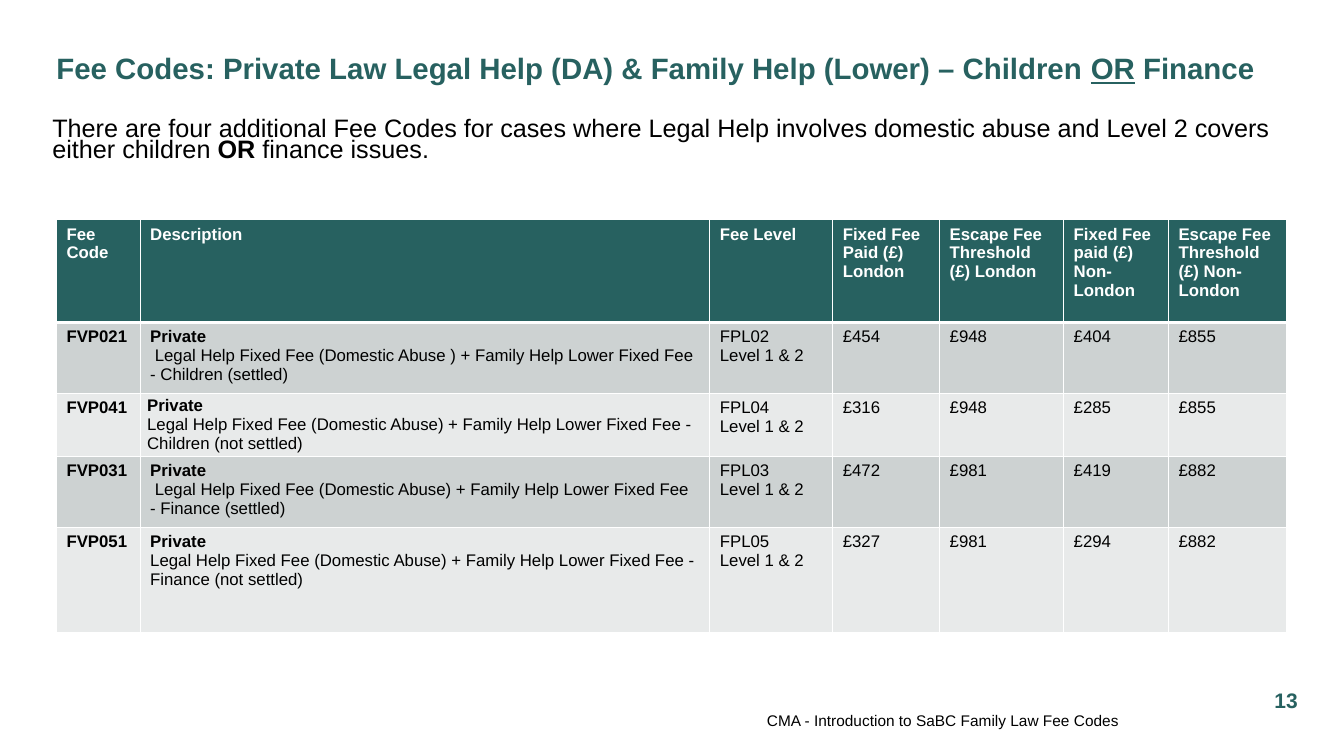
from lxml.etree import SubElement
from pptx import Presentation
from pptx.dml.color import RGBColor
from pptx.enum.text import MSO_ANCHOR, PP_ALIGN
from pptx.oxml.ns import qn
from pptx.util import Inches, Pt

TITLE = [("Fee Codes: Private Law Legal Help (DA) & Family Help (Lower) – Children ", {}),
         ("OR", {"underline": True}), (" Finance", {})]
INTRO = [("There are four additional Fee Codes for cases where Legal Help involves "
          "domestic abuse and Level 2 covers either children ", {}),
         ("OR", {"bold": True}), (" finance issues.", {})]
FOOTER = "CMA - Introduction to SaBC Family Law Fee Codes"
PAGE = "13"

HEADERS = ["Fee Code", "Description", "Fee Level", "Fixed Fee Paid (£) London",
           "Escape Fee Threshold (£) London", "Fixed Fee paid (£) Non-London",
           "Escape Fee Threshold (£) Non-London"]
FEES = [
    ("FVP021", " Legal Help Fixed Fee (Domestic Abuse ) + Family Help Lower Fixed Fee - Children (settled)",
     "FPL02", "£454", "£948", "£404", "£855"),
    ("FVP041", "Legal Help Fixed Fee (Domestic Abuse) + Family Help Lower Fixed Fee - Children (not settled)",
     "FPL04", "£316", "£948", "£285", "£855"),
    ("FVP031", " Legal Help Fixed Fee (Domestic Abuse) + Family Help Lower Fixed Fee - Finance (settled)",
     "FPL03", "£472", "£981", "£419", "£882"),
    ("FVP051", "Legal Help Fixed Fee (Domestic Abuse) + Family Help Lower Fixed Fee - Finance (not settled)",
     "FPL05", "£327", "£981", "£294", "£882"),
]
LEVEL = "Level 1 & 2"
COL_WIDTHS = [0.83, 5.65, 1.22, 1.06, 1.23, 1.04, 1.17]
ROW_HEIGHTS = [1.02, 0.67, 0.63, 0.66, 1.05]
TIGHT_CELL = (2, 1)

THEME = {"font": "Arial", "green": "276160", "black": "000000", "white": "FFFFFF",
         "bands": ("CDD2D2", "E8EAEA"), "title": 21, "intro": 18, "page": 15,
         "table": 12, "footer": 11}


def add_runs(p, runs, size, color, bold=False):
    for text, extra in runs:
        r = p.add_run()
        r.text = text
        fmt = {"name": THEME["font"], "size": Pt(size), "bold": bold} | extra
        for key, value in fmt.items():
            setattr(r.font, key, value)
        r.font.color.rgb = RGBColor.from_string(THEME[color])


def set_frame(tf, inset=0, anchor=MSO_ANCHOR.MIDDLE):
    fmt = {"word_wrap": True, "vertical_anchor": anchor,
           "margin_left": Inches(inset), "margin_right": Inches(inset),
           "margin_top": Inches(inset / 2), "margin_bottom": Inches(inset / 2)}
    for key, value in fmt.items():
        setattr(tf, key, value)


def add_text(s, box, runs, size, color, bold=False, align=PP_ALIGN.LEFT, **frame):
    tf = s.shapes.add_textbox(*map(Inches, box)).text_frame
    set_frame(tf, **frame)
    p = tf.paragraphs[0]
    p.alignment = align
    add_runs(p, runs, size, color, bold)
    return p


def set_borders(cell, top, bottom):
    tc_pr = cell._tc.get_or_add_tcPr()
    for side, width in (("L", 1), ("R", 1), ("T", top), ("B", bottom)):
        ln = SubElement(tc_pr, qn(f"a:ln{side}"), w=str(Pt(width)))
        fill = SubElement(ln, qn("a:solidFill"))
        SubElement(fill, qn("a:srgbClr"), val=THEME["white"])


def fee_row(code, description, level, *amounts):
    return [[(code, True)], [("Private", True), (description, False)],
            [(level, False), (LEVEL, False)], *[[(a, False)] for a in amounts]]


def add_fee_table(s):
    rows = [[[(h, True)] for h in HEADERS]] + [fee_row(*f) for f in FEES]
    table = s.shapes.add_table(len(rows), len(HEADERS), Inches(0.56), Inches(2.18),
                               Inches(sum(COL_WIDTHS)), Inches(sum(ROW_HEIGHTS))).table
    for col, width in zip(table.columns, COL_WIDTHS):
        col.width = Inches(width)
    for i, (row, height) in enumerate(zip(rows, ROW_HEIGHTS)):
        table.rows[i].height = Inches(height)
        fill = THEME["bands"][(i - 1) % 2] if i else THEME["green"]
        for j, lines in enumerate(row):
            cell = table.cell(i, j)
            set_borders(cell, 3 if i == 1 else 1, 1 if i else 3)
            cell.fill.solid()
            cell.fill.fore_color.rgb = RGBColor.from_string(fill)
            if (i, j) == TIGHT_CELL:
                cell.vertical_anchor = MSO_ANCHOR.MIDDLE
                cell.margin_left = cell.margin_right = Inches(0.07)
                cell.margin_top = cell.margin_bottom = 0
            tf = cell.text_frame
            for k, (text, bold) in enumerate(lines):
                p = tf.add_paragraph() if k else tf.paragraphs[0]
                add_runs(p, [(text, {})], THEME["table"], "black" if i else "white", bold)


def main():
    prs = Presentation()
    prs.slide_width, prs.slide_height = Inches(13.33), Inches(7.5)
    s = prs.slides.add_slide(prs.slide_layouts[5])

    title = s.shapes.title
    title.left, title.top, title.width, title.height = map(Inches, (0.56, 0.38, 12.44, 0.59))
    set_frame(title.text_frame)
    p = title.text_frame.paragraphs[0]
    p.alignment = PP_ALIGN.LEFT
    add_runs(p, TITLE, THEME["title"], "green", True)

    add_text(s, (3.22, 7.05, 7.88, 0.2), [(FOOTER, {})], THEME["footer"], "black",
             align=PP_ALIGN.RIGHT)
    add_text(s, (12.51, 6.75, 0.49, 0.4), [(PAGE, {})], THEME["page"], "green", True,
             PP_ALIGN.CENTER)
    add_fee_table(s)
    p = add_text(s, (0.42, 1.16, 12.49, 0.54), INTRO, THEME["intro"], "black",
                 inset=0.1, anchor=MSO_ANCHOR.TOP)
    p.line_spacing = Pt(15)
    prs.save("out.pptx")


if __name__ == "__main__":
    main()
